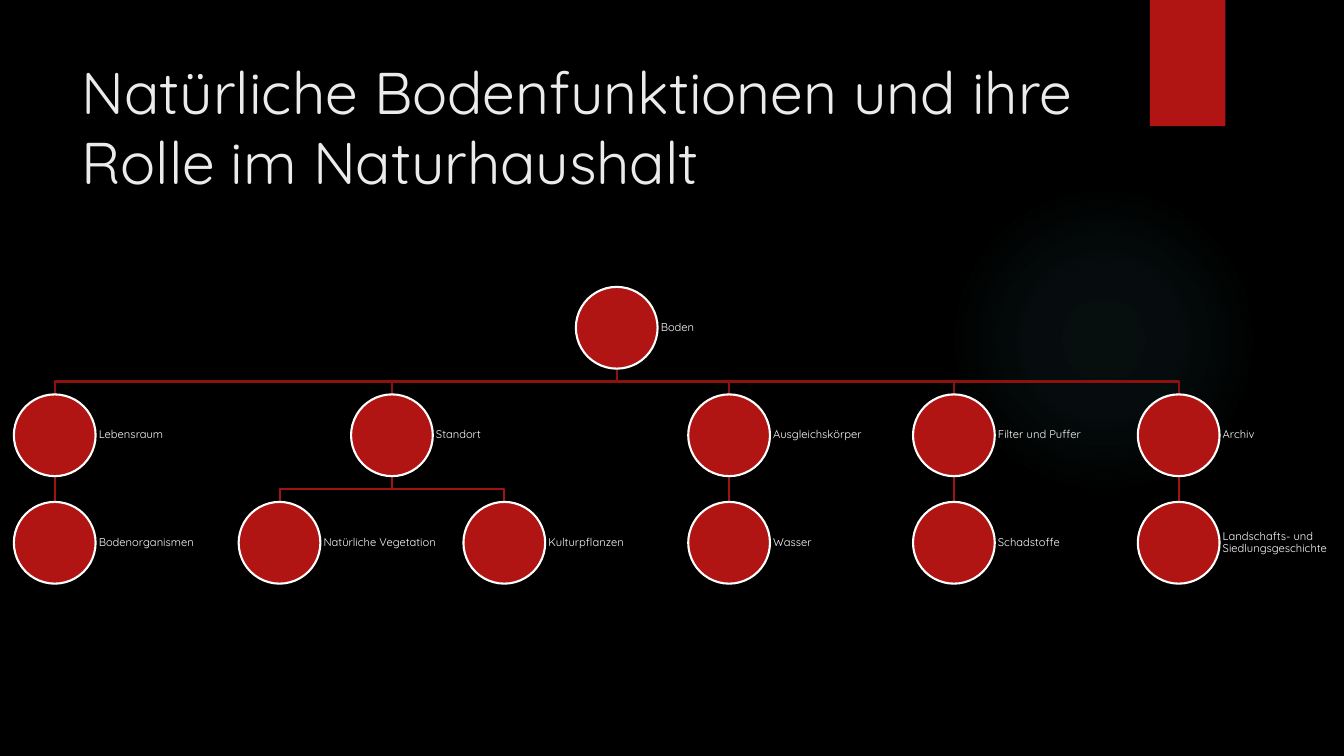
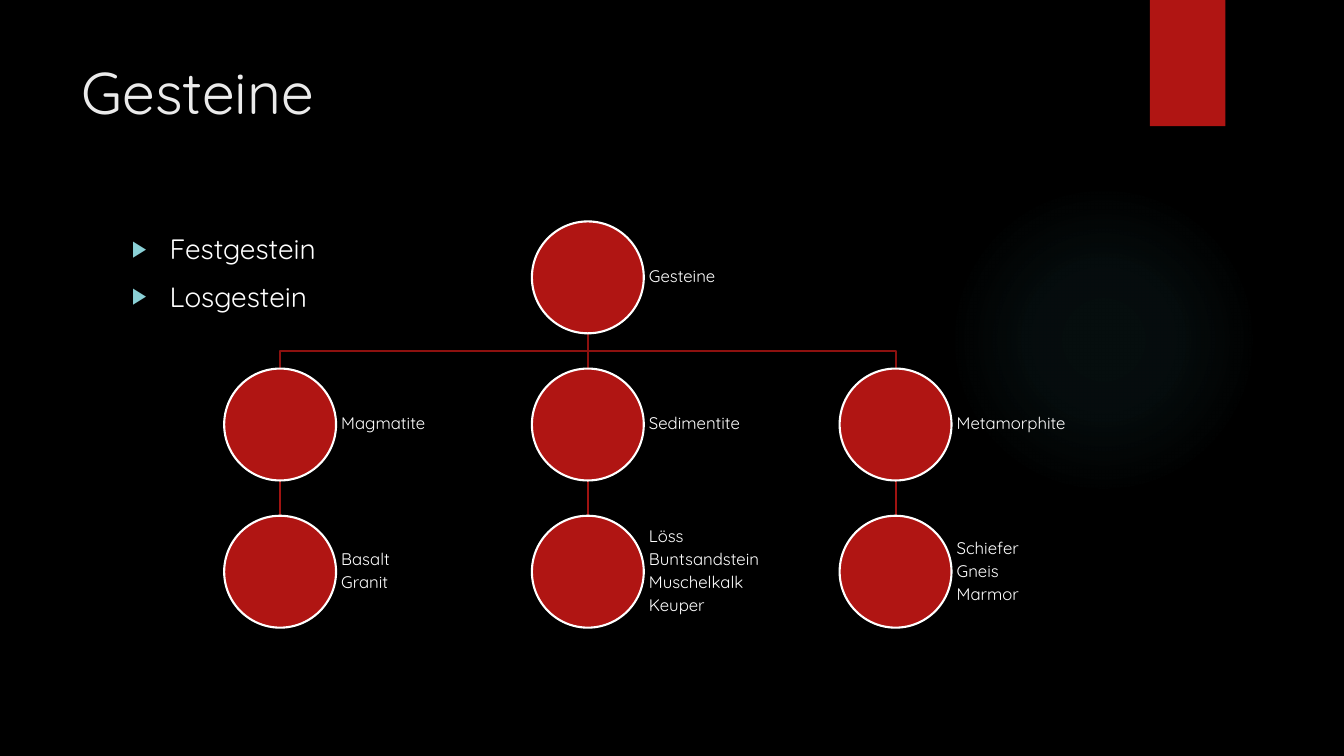
from lxml import etree
from pptx import Presentation
from pptx.dml.color import RGBColor
from pptx.enum import shapes, text
from pptx.oxml import ns, parse_xml
from pptx.util import Cm, Pt

FONT = "Quicksand"
COLORS = {"background": "000000", "title": "EBEBEB", "text": "FFFFFF", "red": "B01513",
          "bullet": "8AD0D6", "glow": "50B9C1"}
EDGE_COLORS = ["8D110F", "A01311"]  # by depth of the parent
GLOW_STOPS = [(0, 7), (36, 6), (69, 0)]  # position and opacity, in percent

# Master placeholders, in cm: left, top, width, height
TITLE_BOX = (1.8, 1.27, 26.14, 3.89)
BODY_BOX = (3.07, 5.71, 24.84, 11.66)

# A node is (lines, children); tree lengths are in cm
PAGES = [
    {
        "title": "Natürliche Bodenfunktionen und ihre Rolle im Naturhaushalt",
        "bullets": [],
        "tree": (["Boden"], [
            (["Lebensraum"], [(["Bodenorganismen"], [])]),
            (["Standort"], [(["Natürliche Vegetation"], []), (["Kulturpflanzen"], [])]),
            (["Ausgleichskörper"], [(["Wasser"], [])]),
            (["Filter und Puffer"], [(["Schadstoffe"], [])]),
            (["Archiv"], [(["Landschafts- und Siedlungsgeschichte"], [])]),
        ]),
        "layout": {"first_x": 1.38, "top": 7.23, "diameter": 2.06, "size": 8, "inset": 0.08},
    },
    {
        "title": "Gesteine",
        "bullets": ["Festgestein", "Losgestein"],
        "tree": (["Gesteine"], [
            (["Magmatite"], [(["Basalt", "Granit"], [])]),
            (["Sedimentite"], [(["Löss", "Buntsandstein", "Muschelkalk", "Keuper"], [])]),
            (["Metamorphite"], [(["Schiefer", "Gneis", "Marmor"], [])]),
        ]),
        "layout": {"first_x": 7.06, "top": 5.58, "diameter": 2.82, "size": 12, "inset": 0.13},
    },
]

# Tree proportions, in circle diameters
COLUMN_PITCH, ROW_PITCH, LABEL_WIDTH = 2.75, 1.315, 1.5


def rgb(name):
    return RGBColor.from_string(COLORS[name])


def apply(target, **values):
    for name, value in values.items():
        setattr(target, name, value)


def style_font(para, size, color):
    apply(para.font, name=FONT, size=Pt(size))
    para.font.color.rgb = rgb(color)


def place(shape, box):
    apply(shape, **dict(zip(("left", "top", "width", "height"), map(Cm, box))))


def style_line(shape, color):
    shape.line.color.rgb = RGBColor.from_string(color)
    shape.line.width = Pt(1.5)


def add_plain_shape(parent, kind, box, color):
    shape = parent.add_shape(kind, *map(Cm, box))
    shape.shadow.inherit = False
    shape.fill.solid()
    shape.fill.fore_color.rgb = rgb(color)
    shape.line.fill.background()
    return shape


def set_glow(shape):
    """Replace the solid fill by a radial fade to transparent."""
    stops = "".join(
        f'<a:gs pos="{position * 1000}"><a:srgbClr val="{COLORS["glow"]}">'
        f'<a:alpha val="{opacity * 1000}"/></a:srgbClr></a:gs>'
        for position, opacity in GLOW_STOPS)
    gradient = parse_xml(
        f'<a:gradFill {ns.nsdecls("a")} rotWithShape="1"><a:gsLst>{stops}</a:gsLst>'
        '<a:path path="circle"><a:fillToRect l="50000" t="50000" r="50000" b="50000"/>'
        '</a:path></a:gradFill>')
    solid = shape._element.spPr.find(ns.qn("a:solidFill"))
    solid.getparent().replace(solid, gradient)


def style_master(master, page):
    """Set background and placeholders; move the decoration from page to master."""
    master.background.fill.solid()
    master.background.fill.fore_color.rgb = rgb("background")
    for kind, box in ((shapes.PP_PLACEHOLDER.TITLE, TITLE_BOX),
                      (shapes.PP_PLACEHOLDER.BODY, BODY_BOX)):
        for holder in master.placeholders:
            if holder.placeholder_format.type == kind:
                place(holder, box)
    glow = add_plain_shape(page.shapes, shapes.MSO_SHAPE.OVAL, (23.9, 4.65, 7.82, 7.82), "glow")
    set_glow(glow)
    band = add_plain_shape(page.shapes, shapes.MSO_SHAPE.RECTANGLE, (28.98, 0, 1.9, 3.18), "red")
    for index, shape in enumerate((glow, band)):
        master.shapes._spTree.insert(2 + index, shape._element)


def add_title(page, wording):
    frame = page.shapes.title.text_frame
    frame.text = wording
    apply(frame, vertical_anchor=text.MSO_ANCHOR.TOP, auto_size=text.MSO_AUTO_SIZE.NONE)
    para = frame.paragraphs[0]
    para.alignment = text.PP_ALIGN.LEFT
    style_font(para, 42, "title")


def add_bullet(para):
    props = para._p.get_or_add_pPr()
    indent = Cm(0.95)
    props.set("marL", str(indent))
    props.set("indent", str(-indent))
    color = etree.SubElement(props, ns.qn("a:buClr"))
    etree.SubElement(color, ns.qn("a:srgbClr"), val=COLORS["bullet"])
    etree.SubElement(props, ns.qn("a:buSzPct"), val="80000")
    etree.SubElement(props, ns.qn("a:buChar"), char="▶")


def add_bullets(page, lines):
    frame = page.placeholders[1].text_frame
    frame.text = "\n".join(lines)
    frame.auto_size = text.MSO_AUTO_SIZE.NONE
    for index, para in enumerate(frame.paragraphs):
        add_bullet(para)
        para.space_before = Pt(10 if index else 0)
        style_font(para, 20, "text")


def arrange(node, depth, leaves, nodes, edges):
    """Give leaves consecutive columns, centre parents above them; return the column."""
    lines, children = node
    columns = [arrange(child, depth + 1, leaves, nodes, edges) for child in children]
    if columns:
        column = (columns[0] + columns[-1]) / 2
    else:
        column = len(leaves)
        leaves.append(node)
    nodes.append((lines, column, depth))
    edges.extend((column, child, depth) for child in columns)
    return column


def add_edge(group, start, end, color):
    (x1, y1), (x2, y2) = start, end
    if x1 == x2:
        edge = group.add_connector(shapes.MSO_CONNECTOR.STRAIGHT, x1, y1, x2, y2)
        etree.SubElement(edge._element.spPr, ns.qn("a:effectLst"))
    else:
        middle = (y1 + y2) // 2
        builder = group.build_freeform(x1, y1)
        builder.add_line_segments([(x1, middle), (x2, middle), (x2, y2)], close=False)
        edge = builder.convert_to_shape()
        edge.fill.background()
        edge.shadow.inherit = False
    style_line(edge, color)


def add_label(group, box, lines, size, inset):
    frame = group.add_textbox(*map(Cm, box)).text_frame
    frame.text = "\n".join(lines)
    apply(frame, word_wrap=True, vertical_anchor=text.MSO_ANCHOR.MIDDLE)
    for side in ("left", "top", "right", "bottom"):
        setattr(frame, f"margin_{side}", Cm(inset))
    for para in frame.paragraphs:
        apply(para, line_spacing=0.9, space_after=Pt(0.3 * size))
        style_font(para, size, "text")


def add_tree(page, tree, first_x, top, diameter, size, inset):
    nodes, edges = [], []
    arrange(tree, 0, [], nodes, edges)
    group = page.shapes.add_group_shape().shapes

    def center_x(column):
        return first_x + column * COLUMN_PITCH * diameter

    def row_top(depth):
        return top + depth * ROW_PITCH * diameter

    for parent, child, depth in edges:
        add_edge(group, (Cm(center_x(parent)), Cm(row_top(depth) + diameter)),
                 (Cm(center_x(child)), Cm(row_top(depth + 1))), EDGE_COLORS[depth])
    for lines, column, depth in nodes:
        x, y = center_x(column), row_top(depth)
        circle = add_plain_shape(group, shapes.MSO_SHAPE.OVAL,
                                 (x - diameter / 2, y, diameter, diameter), "red")
        style_line(circle, COLORS["text"])
        add_label(group, (x + diameter / 2, y, LABEL_WIDTH * diameter, diameter),
                  lines, size, inset)


def main():
    deck = Presentation()
    apply(deck, slide_width=Cm(33.87), slide_height=Cm(19.05))
    title_and_body, title_only = deck.slide_layouts[1], deck.slide_layouts[5]
    for content in PAGES:
        page = deck.slides.add_slide(title_and_body if content["bullets"] else title_only)
        add_title(page, content["title"])
        if content["bullets"]:
            add_bullets(page, content["bullets"])
        add_tree(page, content["tree"], **content["layout"])
    style_master(deck.slide_master, deck.slides[0])
    deck.save("out.pptx")


if __name__ == "__main__":
    main()
